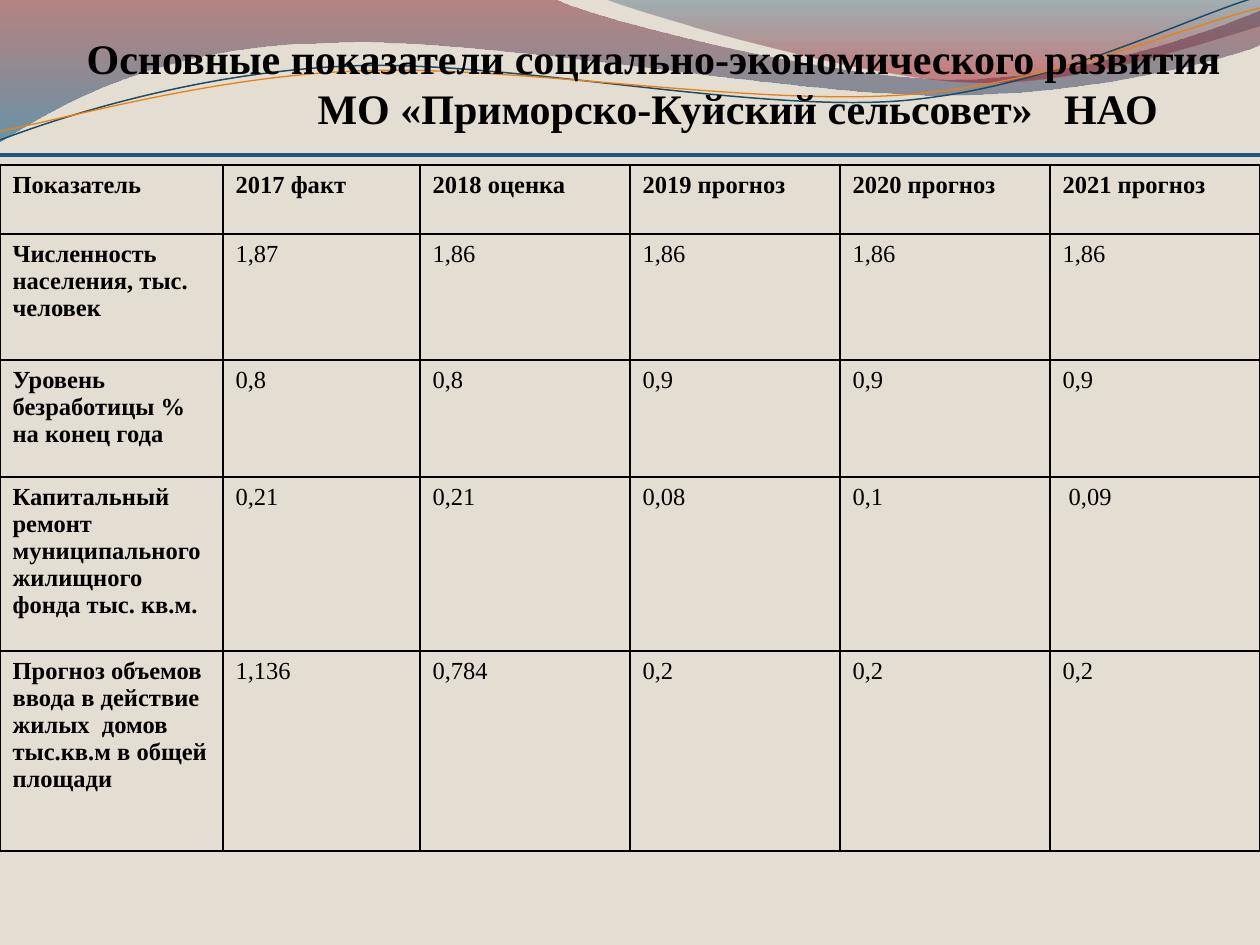
from dataclasses import dataclass
from typing import Optional

from lxml.etree import SubElement
from pptx import Presentation
from pptx.dml.color import RGBColor
from pptx.enum.shapes import MSO_CONNECTOR
from pptx.enum.text import MSO_ANCHOR, PP_ALIGN
from pptx.oxml import parse_xml
from pptx.oxml.ns import nsdecls, qn
from pptx.util import Emu, Pt

EMU_PER_PX = 914400 / 126
WIDTH, HEIGHT = 1260, 945
FONT = "Times New Roman"
COLORS = {
    "background": "E3DED1", "text": "000000", "rule": "1B587C",
    "blue_line": "184E6D", "orange_line": "F07F09",
    "wine": "7E1621", "sea": "005689", "navy": "094467", "red": "A10F1F",
}


@dataclass
class Stop:
    position: int
    color: str
    alpha: int


@dataclass
class Wave:
    start: tuple[int, int]
    segments: list[tuple[int, ...]]  # two numbers: straight; six: Bezier curve
    stops: tuple[Stop, ...] = ()
    line_color: Optional[str] = None
    line_pt: float = 0


@dataclass
class Indicator:
    name: str
    height: int
    values: list[str]


WAVES = [
    Wave((-1, 0), [(554, -1), (600, 21, 837, 79, 955, 79), (1075, 79, 1207, 33, 1260, 11),
                   (1261, 45), (1239, 55, 1096, 96, 940, 95), (784, 95, 481, 35, 324, 43),
                   (163, 45, 58, 105, -1, 142)],
         stops=(Stop(0, "wine", 45), Stop(100, "sea", 55))),
    Wave((604, -1), [(641, 14, 859, 78, 969, 82), (1079, 87, 1211, 40, 1260, 26), (1260, 0)],
         stops=(Stop(0, "navy", 30), Stop(80, "red", 45))),
    Wave((0, 140), [(60, 117, 199, 72, 349, 66), (498, 59, 747, 112, 898, 101),
                    (1050, 89, 1182, 19, 1257, -3)], line_color="blue_line", line_pt=0.85),
    Wave((0, 131), [(59, 121, 207, 77, 357, 71), (508, 64, 747, 106, 903, 95),
                    (1053, 84, 1186, 26, 1260, 8)], line_color="orange_line", line_pt=0.75),
]

# Title lines with their left indents
TITLE_LINES = [
    ("Основные показатели социально-экономического развития", 0),
    ("МО «Приморско-Куйский сельсовет»   НАО", 231),
]

COLUMN_WIDTHS = [223, 197] + [210] * 4
INDICATORS = [
    Indicator("Показатель", 69, ["2017 факт", "2018 оценка", "2019 прогноз",
                                 "2020 прогноз", "2021 прогноз"]),
    Indicator("Численность населения, тыс. человек", 126,
              ["1,87", "1,86", "1,86", "1,86", "1,86"]),
    Indicator("Уровень безработицы % на конец года", 117,
              ["0,8", "0,8", "0,9", "0,9", "0,9"]),
    Indicator("Капитальный ремонт муниципального жилищного фонда тыс. кв.м.", 174,
              ["0,21", "0,21", "0,08", "0,1", " 0,09"]),
    Indicator("Прогноз объемов ввода в действие  жилых  домов тыс.кв.м в общей площади", 200,
              ["1,136", "0,784", "0,2", "0,2", "0,2"]),
]


def px(length: float) -> Emu:
    return Emu(round(length * EMU_PER_PX))


def rgb(name: str) -> RGBColor:
    return RGBColor.from_string(COLORS[name])


def add_run(paragraph, text: str, size: int, bold: bool) -> None:
    run = paragraph.add_run()
    run.text = text
    run.font.name, run.font.size, run.font.bold = FONT, Pt(size), bold
    run.font.color.rgb = rgb("text")


def bend_segments(ribbon, segments: list[tuple[int, ...]]) -> None:
    """Join each three points of a curved segment into one Bezier curve."""
    points = ribbon._element.findall(".//" + qn("a:lnTo"))
    for segment in segments:
        used, points = points[:len(segment) // 2], points[len(segment) // 2:]
        if len(used) == 3:
            curve = parse_xml(f'<a:cubicBezTo {nsdecls("a")}/>')
            used[0].addprevious(curve)
            for point in used:
                curve.append(point[0])
                point.getparent().remove(point)


def gradient_fill(stops: tuple[Stop, ...]):
    stop_xml = "".join(
        f'<a:gs pos="{s.position * 1000}"><a:srgbClr val="{COLORS[s.color]}">'
        f'<a:alpha val="{s.alpha * 1000}"/></a:srgbClr></a:gs>' for s in stops)
    return parse_xml(f'<a:gradFill {nsdecls("a")} rotWithShape="1"><a:gsLst>{stop_xml}</a:gsLst>'
                     '<a:lin ang="5400000" scaled="0"/></a:gradFill>')


def draw_wave(slide, wave: Wave) -> None:
    builder = slide.shapes.build_freeform(*map(px, wave.start), scale=1.0)
    points = [(px(segment[i]), px(segment[i + 1]))
              for segment in wave.segments for i in range(0, len(segment), 2)]
    builder.add_line_segments(points, close=bool(wave.stops))
    ribbon = builder.convert_to_shape()
    bend_segments(ribbon, wave.segments)
    ribbon.shadow.inherit = False
    ribbon.fill.background()
    if wave.stops:
        ribbon.line.fill.background()
        no_fill = ribbon._element.spPr.find(qn("a:noFill"))
        no_fill.getparent().replace(no_fill, gradient_fill(wave.stops))
    else:
        ribbon.line.color.rgb = rgb(wave.line_color)
        ribbon.line.width = Pt(wave.line_pt)


def draw_rule(slide, y: int) -> None:
    rule = slide.shapes.add_connector(MSO_CONNECTOR.STRAIGHT, px(WIDTH), px(y), 0, px(y))
    rule.line.color.rgb = rgb("rule")
    rule.line.width = Pt(2)
    SubElement(rule._element.spPr, qn("a:effectLst"))


def write_title(slide) -> None:
    title = slide.shapes.title
    slide.shapes._spTree.append(title._element)  # in front of the waves
    title.left, title.top, title.width, title.height = px(74), px(26), px(1176), px(113)
    frame = title.text_frame
    frame.word_wrap = True
    frame.vertical_anchor = MSO_ANCHOR.TOP
    for index, (text, indent) in enumerate(TITLE_LINES):
        paragraph = frame.add_paragraph() if index else frame.paragraphs[0]
        paragraph.alignment = PP_ALIGN.LEFT
        paragraph.space_before = Pt(0)
        paragraph._p.get_or_add_pPr().set("marL", str(px(indent)))
        add_run(paragraph, text, 24, True)


def border_cell(cell) -> None:
    properties = cell._tc.get_or_add_tcPr()
    for position, side in enumerate(("lnL", "lnR", "lnT", "lnB")):
        border = parse_xml(f'<a:{side} {nsdecls("a")} w="{Pt(1)}"/>')
        color = SubElement(SubElement(border, qn("a:solidFill")), qn("a:srgbClr"))
        color.set("val", COLORS["text"])
        properties.insert(position, border)


def draw_table(slide, top: int) -> None:
    height = sum(indicator.height for indicator in INDICATORS)
    table = slide.shapes.add_table(len(INDICATORS), len(COLUMN_WIDTHS), 0, px(top),
                                   px(WIDTH), px(height)).table
    table.first_row = table.horz_banding = False
    for column, width in zip(table.columns, COLUMN_WIDTHS):
        column.width = px(width)
    for row, indicator in enumerate(INDICATORS):
        table.rows[row].height = px(indicator.height)
        for col, text in enumerate([indicator.name, *indicator.values]):
            cell = table.cell(row, col)
            cell.fill.background()
            border_cell(cell)
            add_run(cell.text_frame.paragraphs[0], text, 14, row == 0 or col == 0)


def main() -> None:
    deck = Presentation()
    deck.slide_width, deck.slide_height = px(WIDTH), px(HEIGHT)
    slide = deck.slides.add_slide(deck.slide_layouts[5])
    slide.background.fill.solid()
    slide.background.fill.fore_color.rgb = rgb("background")

    # Decorative header
    for wave in WAVES:
        draw_wave(slide, wave)
    draw_rule(slide, 155)

    # Title and indicators
    write_title(slide)
    draw_table(slide, 165)
    deck.save("out.pptx")


if __name__ == "__main__":
    main()
